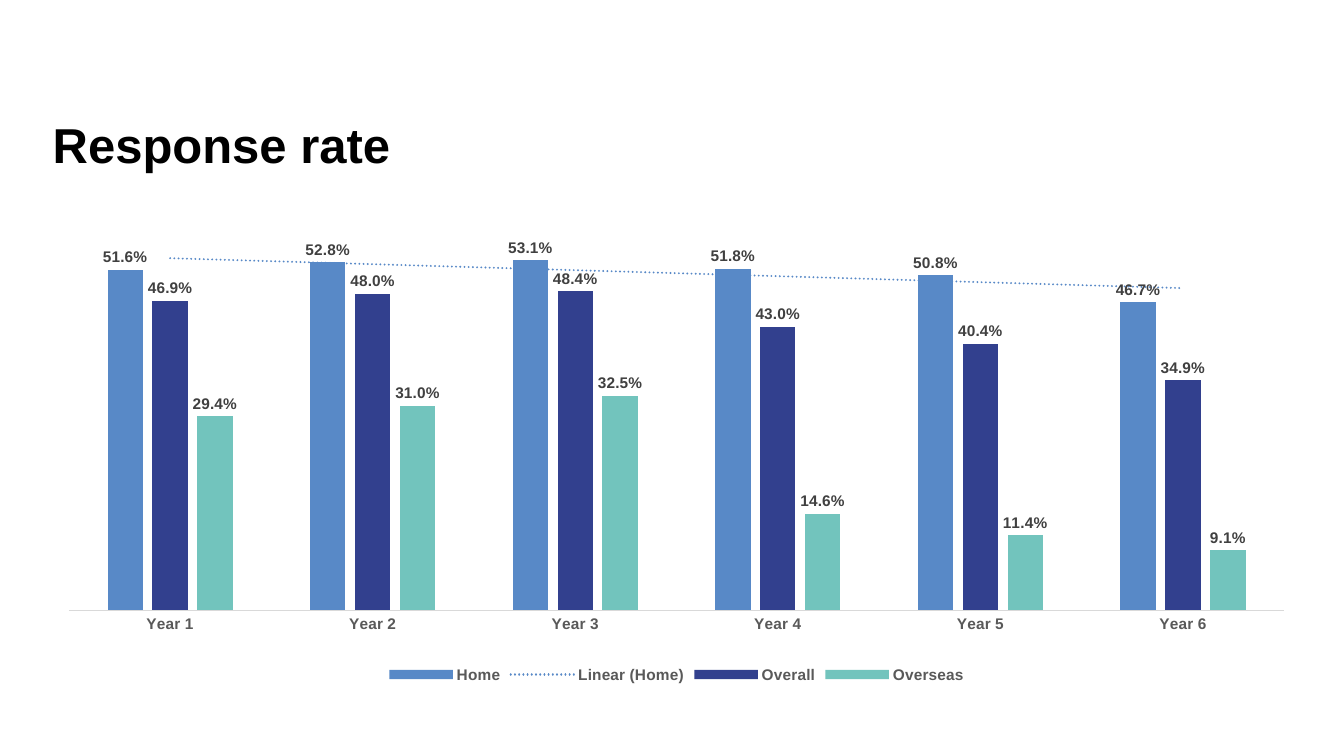
from lxml import etree
from pptx import Presentation
from pptx.chart.data import CategoryChartData
from pptx.dml.color import RGBColor
from pptx.enum.chart import XL_CHART_TYPE as ChartType
from pptx.enum.chart import XL_LABEL_POSITION as LabelPosition
from pptx.enum.chart import XL_LEGEND_POSITION as LegendPosition
from pptx.enum.chart import XL_TICK_LABEL_POSITION as TickLabels
from pptx.enum.chart import XL_TICK_MARK as TickMark
from pptx.enum.text import MSO_ANCHOR as Anchor
from pptx.oxml import parse_xml
from pptx.oxml.ns import nsdecls, qn
from pptx.util import Pt

YEARS = [f"Year {number}" for number in range(1, 7)]
RATES = {
    "Home": ("5889C7", (0.516, 0.528, 0.531, 0.518, 0.508, 0.467)),
    "Overall": ("32408E", (0.469, 0.48, 0.484, 0.43, 0.404, 0.349)),
    "Overseas": ("72C4BD", (0.294, 0.31, 0.325, 0.146, 0.114, 0.091)),
}
PLOT = {"x": 0.013, "y": 0, "w": 0.974, "h": 0.837}
PERCENT = "0.0%"


def apply(target, **values):
    """Set each named format value on the target."""
    for name, value in values.items():
        setattr(target, name, value)


def color(hex_value):
    """Turn a hex string into a colour."""
    return RGBColor.from_string(hex_value)


def style_font(font, size, hex_value, bold=True):
    """Give a font the slide's typeface with a size, colour and weight."""
    apply(font, name="Arial", size=Pt(size), bold=bold)
    font.color.rgb = color(hex_value)


def add_title(slide, left, top, width, height):
    """Place the heading in the given box."""
    frame = slide.shapes.add_textbox(Pt(left), Pt(top), Pt(width), Pt(height)).text_frame
    apply(frame, word_wrap=True, vertical_anchor=Anchor.TOP,
          margin_left=0, margin_top=0, margin_right=0, margin_bottom=0)
    heading = frame.paragraphs[0]
    heading.line_spacing = Pt(46)
    run = heading.add_run()
    run.text = "Response rate"
    style_font(run.font, 35, "000000")


def set_plot_layout(chart):
    """Fix the inner plot area to fractions of the chart."""
    plot_area = chart._chartSpace.chart.plotArea
    for layout in plot_area.findall(qn("c:layout")):
        plot_area.remove(layout)
    layout = parse_xml(f'<c:layout {nsdecls("c")}><c:manualLayout/></c:layout>')
    settings = {"layoutTarget": "inner", "xMode": "edge", "yMode": "edge", **PLOT}
    for tag, value in settings.items():
        etree.SubElement(layout[0], qn(f"c:{tag}")).set("val", str(value))
    plot_area.insert(0, layout)


def add_trend(series, hex_value):
    """Add a dotted linear trend line to a series."""
    trend = parse_xml(
        f'<c:trendline {nsdecls("c", "a")}><c:spPr><a:ln w="{Pt(1.5)}" cap="rnd">'
        f'<a:solidFill><a:srgbClr val="{hex_value}"/></a:solidFill>'
        '<a:prstDash val="sysDot"/></a:ln></c:spPr>'
        '<c:trendlineType val="linear"/><c:dispRSqr val="0"/>'
        '<c:dispEq val="0"/></c:trendline>')
    series._element.find(qn("c:cat")).addprevious(trend)


def style_series(series, hex_value):
    """Colour a series and label its columns."""
    series.format.fill.solid()
    series.format.fill.fore_color.rgb = color(hex_value)
    series.invert_if_negative = False
    labels = series.data_labels
    apply(labels, show_value=True, number_format=PERCENT,
          number_format_is_linked=False, position=LabelPosition.OUTSIDE_END)
    style_font(labels.font, 11, "404040")


def style_axes(chart):
    """Show only the year axis and fix the hidden value scale."""
    years = chart.category_axis
    apply(years, major_tick_mark=TickMark.NONE, minor_tick_mark=TickMark.NONE,
          tick_label_position=TickLabels.NEXT_TO_AXIS, has_major_gridlines=False)
    style_font(years.tick_labels.font, 11, "595959")
    years.format.line.color.rgb = color("D9D9D9")
    years.format.line.width = Pt(0.75)
    rates = chart.value_axis
    apply(rates, minimum_scale=0, maximum_scale=0.6,
          has_major_gridlines=False, visible=False)
    apply(rates.tick_labels, number_format=PERCENT, number_format_is_linked=False)


def add_rate_chart(slide, left, top, width, height):
    """Place the response rate columns in the given box."""
    data = CategoryChartData(number_format=PERCENT)
    data.categories = YEARS
    for name, (_, values) in RATES.items():
        data.add_series(name, values)
    chart = slide.shapes.add_chart(ChartType.COLUMN_CLUSTERED, Pt(left), Pt(top),
                                   Pt(width), Pt(height), data).chart
    apply(chart, has_title=False, has_legend=True)
    style_font(chart.font, 10, "000000", bold=False)
    apply(chart.legend, position=LegendPosition.BOTTOM, include_in_layout=False)
    style_font(chart.legend.font, 11, "595959")
    columns = chart.plots[0]
    apply(columns, gap_width=219, overlap=-27, vary_by_categories=False)
    for series in columns.series:
        style_series(series, RATES[series.name][0])
    add_trend(columns.series[0], RATES["Home"][0])
    style_axes(chart)
    set_plot_layout(chart)


def main():
    """Build the slide and save it."""
    deck = Presentation()
    apply(deck, slide_width=Pt(960), slide_height=Pt(540))
    slide = deck.slides.add_slide(deck.slide_layouts[6])
    left, width = 37.6, 891.4
    add_title(slide, left, 77.8, width, 68.4)
    add_rate_chart(slide, left, 153.4, width, 337.7)
    deck.save("out.pptx")


if __name__ == "__main__":
    main()
